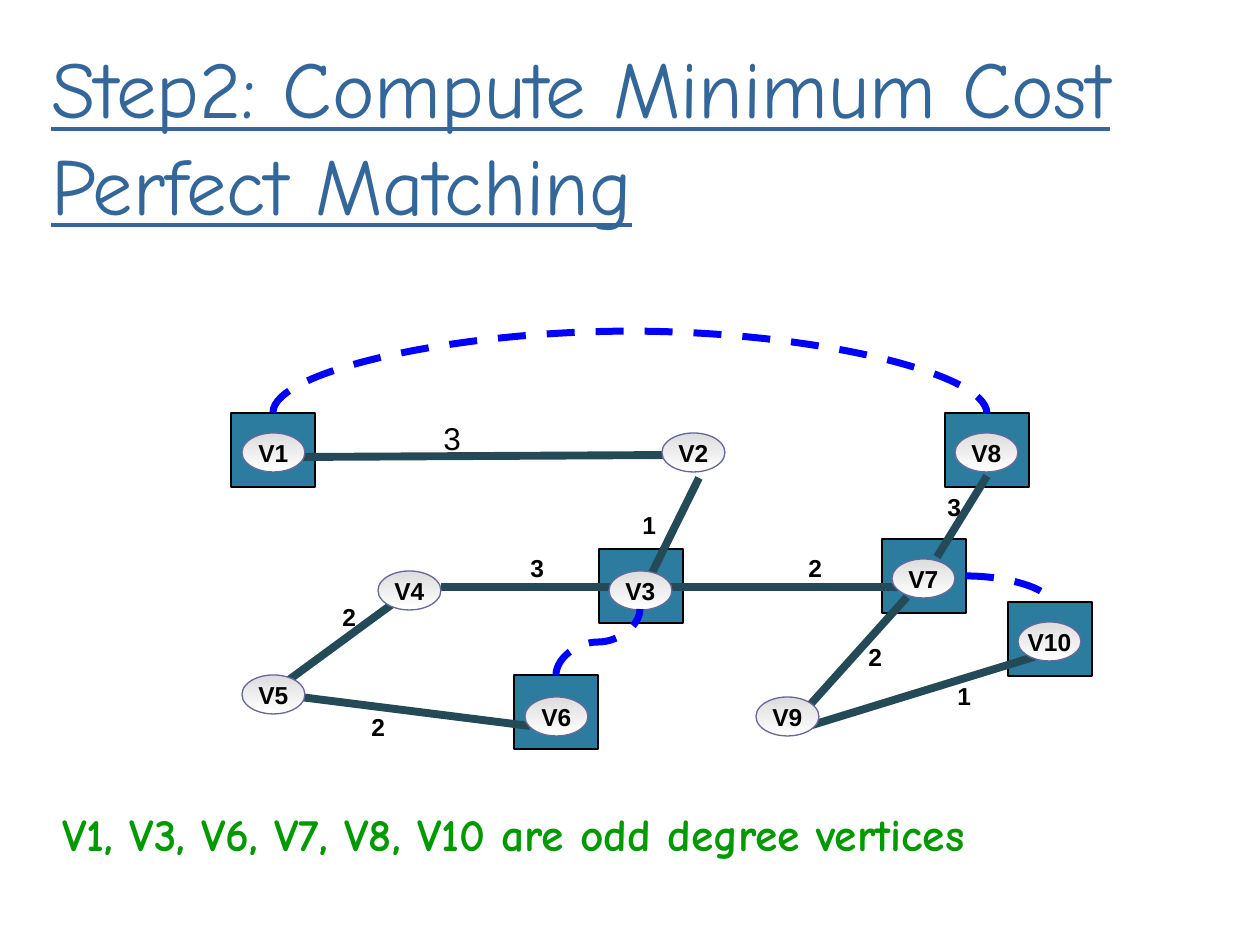
"""Build the slide on minimum cost perfect matching of odd degree vertices."""
from dataclasses import dataclass

from lxml import etree
from pptx import Presentation
from pptx import util as u
from pptx.dml.color import RGBColor
from pptx.enum import dml, shapes, text
from pptx.oxml.ns import qn


@dataclass(frozen=True)
class Theme:
    heading: str = "336699"
    caption: str = "009900"
    ink: str = "000000"
    odd: str = "2C7C9F"
    edge: str = "244A58"
    matching: str = "0000FF"
    node_top: str = "DDDDDD"
    node_bottom: str = "FFFFFF"
    node_rim: str = "666699"
    display_font: str = "Comic Neue"
    label_font: str = "Arial"
    heading_size: int = 46
    caption_size: int = 26
    weight_size: int = 18
    label_size: int = 14
    thin: float = 0.75
    edge_width: float = 4.5
    matching_width: float = 4


def px(length):
    return u.Emu(round(length * 914400 / 126))


def rgb(value):
    return RGBColor.from_string(value)


def write(frame, content, *, size, font, color, bold=False, underline=False,
          align=text.PP_ALIGN.LEFT):
    paragraph = frame.paragraphs[0]
    paragraph.alignment = align
    run = paragraph.add_run()
    run.text = content
    run.font.size = u.Pt(size)
    run.font.name = font
    run.font.bold = bold
    run.font.underline = underline
    run.font.color.rgb = rgb(color)


class Canvas:
    def __init__(self, slide, theme):
        self.slide = slide
        self.theme = theme

    def words(self, content, box, wrap=False, **style):
        frame = self.slide.shapes.add_textbox(*map(px, box)).text_frame
        frame.word_wrap = wrap
        frame.auto_size = text.MSO_AUTO_SIZE.SHAPE_TO_FIT_TEXT
        write(frame, content, **style)

    def outline(self, preset, box, color):
        shape = self.slide.shapes.add_shape(preset, *map(px, box))
        shape.shadow.inherit = False
        shape.line.color.rgb = rgb(color)
        shape.line.width = u.Pt(self.theme.thin)
        return shape

    def odd_square(self, left, top):
        square = self.outline(shapes.MSO_SHAPE.RECTANGLE, (left, top, 84, 74), self.theme.ink)
        square.fill.solid()
        square.fill.fore_color.rgb = rgb(self.theme.odd)
        return square

    def node(self, name, left, top):
        theme = self.theme
        oval = self.outline(shapes.MSO_SHAPE.FLOWCHART_CONNECTOR, (left, top, 63, 39),
                            theme.node_rim)
        oval.fill.gradient()
        oval.fill.gradient_angle = 270
        for stop, color in zip(oval.fill.gradient_stops, (theme.node_top, theme.node_bottom)):
            stop.color.rgb = rgb(color)
        frame = oval.text_frame
        frame.word_wrap = False
        frame.vertical_anchor = text.MSO_ANCHOR.MIDDLE
        write(frame, name, size=theme.label_size, font=theme.label_font,
              color=theme.ink, bold=True, align=text.PP_ALIGN.CENTER)

    def link(self, kind, start, end, color, width):
        line = self.slide.shapes.add_connector(kind, *map(px, start + end))
        line.line.color.rgb = rgb(color)
        line.line.width = u.Pt(width)
        etree.SubElement(line._element.spPr, qn("a:effectLst"))
        return line

    def edge(self, start, end):
        self.link(shapes.MSO_CONNECTOR.STRAIGHT, start, end,
                  self.theme.edge, self.theme.edge_width)

    def match(self, start, end, source, target=None, turn=0, bend=None):
        """Draw a dashed curve; source and target are (square, side) pairs."""
        curve = self.link(shapes.MSO_CONNECTOR.CURVE, start, end,
                          self.theme.matching, self.theme.matching_width)
        curve.line.dash_style = dml.MSO_LINE.DASH
        curve.begin_connect(*source)
        if target:
            curve.end_connect(*target)
        geometry = curve._element.spPr.find(qn("a:prstGeom"))
        if bend is None:
            geometry.set("prst", "curvedConnector2")
            return
        across, down = abs(end[0] - start[0]), max(abs(end[1] - start[1]), 1)
        curve.left = px((start[0] + end[0] - down) / 2)
        curve.top = px((start[1] + end[1] - across) / 2)
        curve.width, curve.height = px(down), px(across)
        xfrm = curve._element.spPr.find(qn("a:xfrm"))
        xfrm.set("rot", str(turn * 60000))
        xfrm.set("flipV", str(int(turn == 90)))
        adjustments = geometry.find(qn("a:avLst"))
        if adjustments is None:
            adjustments = etree.SubElement(geometry, qn("a:avLst"))
        etree.SubElement(adjustments, qn("a:gd"), name="adj1", fmla=f"val {bend * 1000}")


ODD = {"V10": (1008, 602), "V3": (599, 549), "V6": (514, 675),
       "V7": (882, 539), "V8": (945, 413), "V1": (231, 413)}
NODES = {"V1": (242, 433), "V2": (662, 433), "V8": (955, 433), "V4": (378, 571),
         "V3": (609, 571), "V7": (892, 559), "V5": (242, 675), "V6": (525, 697),
         "V9": (756, 697), "V10": (1018, 622)}
WEIGHTS = [("1", 945, 675), ("3", 935, 486), ("2", 856, 636), ("2", 796, 547),
           ("1", 630, 504), ("2", 359, 706), ("2", 330, 596), ("3", 518, 547)]
EDGES = [((650, 577), (699, 478)), ((809, 726), (1037, 656)), ((660, 587), (907, 587)),
         ((907, 597), (809, 706)), ((402, 597), (282, 685)), ((292, 696), (530, 726)),
         ((441, 587), (620, 587)), ((302, 457), (672, 455)), ((937, 557), (987, 476))]


def main():
    deck = Presentation()
    deck.slide_width, deck.slide_height = px(1260), px(945)
    theme = Theme()
    canvas = Canvas(deck.slides.add_slide(deck.slide_layouts[6]), theme)

    squares = {name: canvas.odd_square(*spot) for name, spot in ODD.items()}
    canvas.words("Step2: Compute Minimum Cost Perfect Matching", (39, 32, 1196, 208),
                 wrap=True, size=theme.heading_size, font=theme.display_font,
                 color=theme.heading, underline=True)
    for weight, left, top in WEIGHTS:
        canvas.words(weight, (left, top, 39, 42), size=theme.label_size,
                     font=theme.label_font, color=theme.ink, bold=True)
    canvas.words("3", (431, 413, 43, 50), size=theme.weight_size,
                 font=theme.label_font, color=theme.ink)
    for start, end in EDGES:
        canvas.edge(start, end)
    for name, spot in NODES.items():
        canvas.node(name, *spot)

    canvas.match((273, 413), (987, 413), (squares["V1"], 0), (squares["V8"], 0),
                 turn=90, bend=-8200)
    canvas.match((966, 576), (1050, 602), (squares["V7"], 3), (squares["V10"], 0))
    canvas.match((556, 675), (640, 609), (squares["V6"], 0), turn=270, bend=50)
    canvas.words("V1, V3, V6, V7, V8, V10 are odd degree vertices", (50, 800, 1174, 68),
                 wrap=True, size=theme.caption_size, font=theme.display_font,
                 color=theme.caption, bold=True)
    deck.save("out.pptx")


if __name__ == "__main__":
    main()
